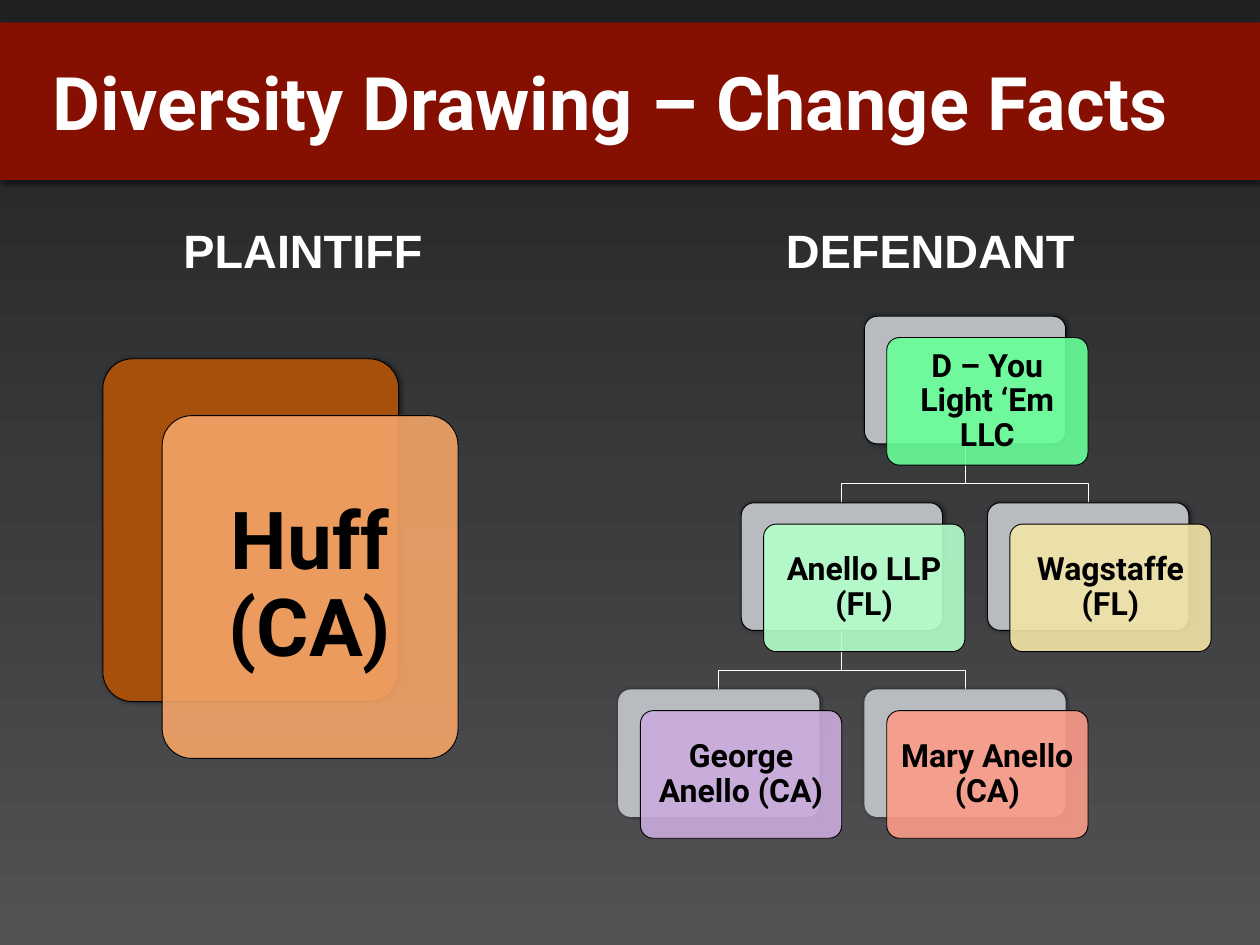
"""Build the diversity drawing slide with its plaintiff and defendant parties."""
from dataclasses import dataclass
from typing import Optional

from lxml.etree import SubElement
from pptx import Presentation
from pptx.dml.color import RGBColor
from pptx.enum.shapes import MSO_SHAPE
from pptx.enum.text import MSO_ANCHOR, MSO_AUTO_SIZE, PP_ALIGN
from pptx.oxml.ns import qn
from pptx.shapes.autoshape import Shape
from pptx.slide import Slide
from pptx.util import Cm, Pt


@dataclass(frozen=True)
class Theme:
    """Colours, fonts and type sizes of the slide."""
    background_top: str = "1E2021"
    background_bottom: str = "535356"
    banner: str = "851001"
    light: str = "FFFFFF"
    dark: str = "000000"
    defendant_back: str = "B8BCC1"
    plaintiff_back: str = "A6500C"
    plaintiff_front: str = "F4A467"
    heading_font: str = "Arial"
    main_font: str = "Roboto"
    title_size: float = 60
    heading_size: float = 38
    plaintiff_size: float = 65
    defendant_size: float = 26
    line_width: float = 0.75


@dataclass(frozen=True)
class Card:
    """A labelled card lying in front of a shifted one, measured in centimetres."""
    text: str
    left: float
    top: float
    width: float
    height: float
    shift_x: float
    shift_y: float
    back: str
    front: str
    size: float
    inset: float
    back_outlined: bool = True


@dataclass(frozen=True)
class Party:
    """A defendant's place in the ownership tree."""
    text: str
    column: int
    row: int
    front: str
    owner: Optional["Party"] = None


@dataclass(frozen=True)
class Heading:
    """A side of the dispute and the centre of its heading in centimetres."""
    text: str
    centre: float


THEME = Theme()
SLIDE_WIDTH, SLIDE_HEIGHT = 36.12, 27.1
BANNER_TOP, BANNER_HEIGHT = 0.64, 4.52
TREE_LEFT, TREE_TOP = 17.72, 9.07
COLUMN_STEP, ROW_STEP = 3.53, 5.35
NODE_WIDTH, NODE_HEIGHT = 5.77, 3.66
BEND_DROP = 1.14

LLC = Party("D – You Light ‘Em LLC", 2, 0, "69FF99")
LLP = Party("Anello LLP (FL)", 1, 1, "B4FFCC", LLC)
PARTIES = [
    LLC,
    LLP,
    Party("George Anello (CA)", 0, 2, "CAACDD", LLP),
    Party("Mary Anello (CA)", 2, 2, "FB9B89", LLP),
    Party("Wagstaffe (FL)", 3, 1, "F1E5A7", LLC),
]
HEADINGS = [Heading("PLAINTIFF", 8.69), Heading("DEFENDANT", 26.67)]
PLAINTIFF = Card("Huff (CA)", 2.95, 10.29, 8.48, 9.83, 1.7, 1.63,
                 THEME.plaintiff_back, THEME.plaintiff_front,
                 THEME.plaintiff_size, 0.69)


def write(shape: Shape, text: str, *, size: float, colour: str = THEME.light,
          font: str = THEME.main_font, inset: float = 0.15,
          line_spacing: float = 1.0) -> None:
    """Put bold centred text into a shape."""
    frame = shape.text_frame
    frame.text = text
    frame.word_wrap = True
    frame.auto_size = MSO_AUTO_SIZE.NONE
    frame.vertical_anchor = MSO_ANCHOR.MIDDLE
    frame.margin_left = frame.margin_right = Cm(inset)
    frame.margin_top = frame.margin_bottom = Cm(inset)
    paragraph = frame.paragraphs[0]
    paragraph.alignment = PP_ALIGN.CENTER
    paragraph.line_spacing = line_spacing
    lettering = paragraph.runs[0].font
    lettering.name, lettering.size, lettering.bold = font, Pt(size), True
    lettering.color.rgb = RGBColor.from_string(colour)


def add_panel(slide: Slide, kind: MSO_SHAPE, left: float, top: float,
              width: float, height: float, fill: str, outlined: bool) -> Shape:
    """Add a filled preset shape without a shadow."""
    panel = slide.shapes.add_shape(kind, Cm(left), Cm(top), Cm(width), Cm(height))
    panel.shadow.inherit = False
    panel.fill.solid()
    panel.fill.fore_color.rgb = RGBColor.from_string(fill)
    if outlined:
        panel.line.color.rgb = RGBColor.from_string(THEME.dark)
        panel.line.width = Pt(THEME.line_width)
    else:
        panel.line.fill.background()
    return panel


def cast_shadow(shape: Shape, blur: float, distance: float, angle: int) -> None:
    """Give a shape a half-transparent outer shadow."""
    effects = shape.element.spPr.find(qn("a:effectLst"))
    shadow = SubElement(effects, qn("a:outerShdw"), blurRad=str(Pt(blur)),
                        dist=str(Pt(distance)), dir=str(angle * 60000), rotWithShape="0")
    colour = SubElement(shadow, qn("a:srgbClr"), val=THEME.dark)
    SubElement(colour, qn("a:alpha"), val="50000")


def add_card(slide: Slide, card: Card) -> None:
    """Draw the back card and the translucent labelled card over it."""
    back = add_panel(slide, MSO_SHAPE.ROUNDED_RECTANGLE, card.left, card.top,
                     card.width, card.height, card.back, card.back_outlined)
    cast_shadow(back, blur=4, distance=1, angle=0)
    front = add_panel(slide, MSO_SHAPE.ROUNDED_RECTANGLE, card.left + card.shift_x,
                      card.top + card.shift_y, card.width, card.height, card.front, True)
    tint = front.element.spPr.find(f"{qn('a:solidFill')}/{qn('a:srgbClr')}")
    SubElement(tint, qn("a:alpha"), val="90000")
    for panel in (back, front):
        panel.adjustments[0] = 0.1
    write(front, card.text, size=card.size, colour=THEME.dark,
          inset=card.inset, line_spacing=0.9)


def node_place(party: Party) -> tuple[float, float]:
    """Return the left and top of a party's back card."""
    return TREE_LEFT + party.column * COLUMN_STEP, TREE_TOP + party.row * ROW_STEP


def add_branch(slide: Slide, owner: Party, member: Party) -> None:
    """Draw the bent line from an owner down to a member."""
    owner_left, owner_top = node_place(owner)
    member_left, member_top = node_place(member)
    start_x, end_x = Cm(owner_left + NODE_WIDTH / 2), Cm(member_left + NODE_WIDTH / 2)
    start_y = Cm(owner_top + NODE_HEIGHT)
    bend_y = start_y + Cm(BEND_DROP)
    route = slide.shapes.build_freeform(start_x, start_y)
    route.add_line_segments([(start_x, bend_y), (end_x, bend_y), (end_x, Cm(member_top))],
                            close=False)
    branch = route.convert_to_shape()
    branch.shadow.inherit = False
    branch.fill.background()
    branch.line.color.rgb = RGBColor.from_string(THEME.light)
    branch.line.width = Pt(THEME.line_width)


def add_banner(slide: Slide) -> None:
    """Draw the banner and set the title over it."""
    banner = add_panel(slide, MSO_SHAPE.RECTANGLE, 0, BANNER_TOP, SLIDE_WIDTH,
                       BANNER_HEIGHT, THEME.banner, False)
    cast_shadow(banner, blur=3, distance=2, angle=90)
    title = slide.shapes.title
    banner.element.addnext(title.element)
    title.left, title.top = Cm(0), Cm(BANNER_TOP)
    title.width, title.height = Cm(35), Cm(BANNER_HEIGHT)
    write(title, "Diversity Drawing – Change Facts", size=THEME.title_size)


def paint_background(slide: Slide) -> None:
    """Fill the slide with a gradient running from top to bottom."""
    fill = slide.background.fill
    fill.gradient()
    fill.gradient_angle = 270
    for stop, colour in zip(fill.gradient_stops,
                            (THEME.background_top, THEME.background_bottom)):
        stop.color.rgb = RGBColor.from_string(colour)


def main() -> None:
    """Build and save the slide."""
    deck = Presentation()
    deck.slide_width, deck.slide_height = Cm(SLIDE_WIDTH), Cm(SLIDE_HEIGHT)
    slide = deck.slides.add_slide(deck.slide_layouts[5])
    paint_background(slide)
    add_banner(slide)
    for heading in HEADINGS:
        side = slide.shapes.add_textbox(Cm(heading.centre - 5), Cm(6.22), Cm(10), Cm(1.9))
        write(side, heading.text, size=THEME.heading_size, font=THEME.heading_font)
    for party in PARTIES:
        if party.owner:
            add_branch(slide, party.owner, party)
    for party in PARTIES:
        add_card(slide, Card(party.text, *node_place(party), NODE_WIDTH, NODE_HEIGHT,
                             0.64, 0.61, THEME.defendant_back, party.front,
                             THEME.defendant_size, 0.28, party.row < 2))
    add_card(slide, PLAINTIFF)
    deck.save("out.pptx")


if __name__ == "__main__":
    main()
